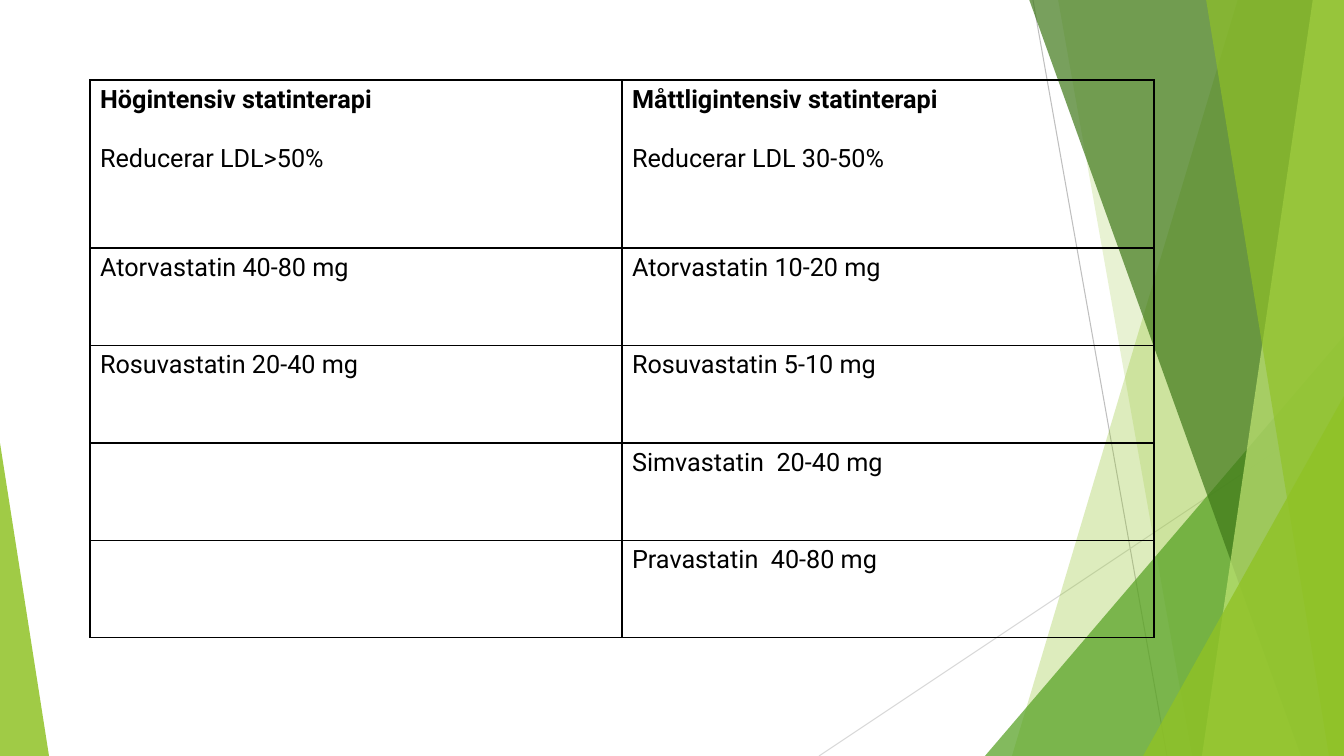
import pptx
import pptx.util
import pptx.dml.color
import pptx.enum.shapes
import pptx.oxml
import pptx.oxml.ns

RGB = pptx.dml.color.RGBColor
KIND = pptx.enum.shapes.MSO_SHAPE
LINK = pptx.enum.shapes.MSO_CONNECTOR
QN = pptx.oxml.ns.qn
PX = 914400 / 100.8
WIDE, HIGH = 1344, 756

BLACK = RGB(0x00, 0x00, 0x00)
GREEN = RGB(0x90, 0xC2, 0x26)
LEAF = RGB(0x54, 0xA0, 0x21)
DARK = RGB(0x3F, 0x78, 0x19)
LIME = RGB(0xC0, 0xE4, 0x74)
SILVER = RGB(0xBF, 0xBF, 0xBF)
PALE = RGB(0xD9, 0xD9, 0xD9)

ROWS = [
    (["Högintensiv statinterapi", "Reducerar LDL>50%"],
     ["Måttligintensiv statinterapi", "Reducerar LDL 30-50%"]),
    (["Atorvastatin 40-80 mg"], ["Atorvastatin 10-20 mg"]),
    (["Rosuvastatin 20-40 mg"], ["Rosuvastatin 5-10 mg"]),
    ([], ["Simvastatin  20-40 mg"]),
    ([], ["Pravastatin  40-80 mg"]),
]


def emu(px):
    return pptx.util.Emu(round(px * PX))


def paint(shape, color, alpha):
    """Fill without outline; alpha is the opacity in percent."""
    shape.shadow.inherit = False
    shape.fill.solid()
    shape.fill.fore_color.rgb = color
    shape.line.fill.background()
    tint = shape.fill._xPr.find(QN("a:solidFill"))[0]
    tint.append(pptx.oxml.parse_xml(
        f'<a:alpha {pptx.oxml.ns.nsdecls("a")} val="{alpha * 1000}"/>'))


def ray(slide, start, end, color):
    line = slide.shapes.add_connector(
        LINK.STRAIGHT, *[emu(n) for n in (*start, *end)])
    line.line.color.rgb = color
    line.line.width = pptx.util.Pt(0.75)
    line._element.spPr.append(pptx.oxml.parse_xml(
        f'<a:effectLst {pptx.oxml.ns.nsdecls("a")}/>'))


def band(slide, box, top, foot, color, alpha):
    """Fill the box to the right of an edge from x=top to x=foot."""
    left, up, wide, high = box
    right, low = left + wide, up + high
    form = slide.shapes.build_freeform(left + top, up - 1, scale=PX)
    form.add_line_segments(
        [(right, up - 1), (right, low), (left + foot, low)], close=True)
    paint(form.convert_to_shape(), color, alpha)


def wedge(slide, box, peak, color, alpha):
    shape = slide.shapes.add_shape(KIND.ISOSCELES_TRIANGLE,
                                   *[emu(n) for n in box])
    shape.adjustments[0] = peak
    paint(shape, color, alpha)


def corner(slide, box, wide, high, color, alpha):
    """Place a right triangle in the lower right corner of the box."""
    left, top, full, tall = box
    wedge(slide, (left + full - wide, top + tall - high, wide, high),
          1, color, alpha)


def decor(slide, box):
    left, top, wide, high = box
    right, low = left + wide, top + high
    ray(slide, (left + 1033, top), (left + 1167, low), SILVER)
    ray(slide, (right, top + 406), (left + 819, low), PALE)
    band(slide, box, 1238, 1012, GREEN, 30)
    band(slide, box, 1058, 1192, GREEN, 20)
    corner(slide, box, 359, 420, LEAF, 72)
    band(slide, box, 1029, 1301, DARK, 70)
    band(slide, box, 1313, 1202, LIME, 70)
    band(slide, box, 1206, 1329, GREEN, 65)
    corner(slide, box, 201, 360, GREEN, 80)
    wedge(slide, (left, low - 313, 49, 313), 0, GREEN, 85)


def frame(cell):
    """Clear the cell's fill and rule its four sides."""
    cell.fill.background()
    props = cell._tc.get_or_add_tcPr()
    for spot, side in enumerate("LRTB"):
        props.insert(spot, pptx.oxml.parse_xml(
            f'<a:ln{side} {pptx.oxml.ns.nsdecls("a")} w="12700"><a:solidFill>'
            f'<a:srgbClr val="{BLACK}"/></a:solidFill></a:ln{side}>'))


def write(cell, lines, head):
    for spot, text in enumerate(lines):
        paras = cell.text_frame
        para = paras.add_paragraph() if spot else paras.paragraphs[0]
        if spot:
            para.space_before = pptx.util.Pt(21)
        run = para.add_run()
        run.text = text
        style = {"name": "Roboto", "size": pptx.util.Pt(18),
                 "bold": head and spot == 0}
        for key, value in style.items():
            setattr(run.font, key, value)
        run.font.color.rgb = BLACK


def doses(slide, box, first):
    """Draw the table; first is the height of its top row."""
    high = box[3]
    count = len(ROWS)
    grid = slide.shapes.add_table(count, 2, *[emu(n) for n in box]).table
    grid.first_row = grid.horz_banding = False
    for row, texts in enumerate(ROWS):
        grid.rows[row].height = emu(
            (high - first) / (count - 1) if row else first)
        for col, lines in enumerate(texts):
            cell = grid.cell(row, col)
            frame(cell)
            write(cell, lines, row == 0)


def main():
    deck = pptx.Presentation()
    deck.slide_width, deck.slide_height = emu(WIDE), emu(HIGH)
    slide = deck.slides.add_slide(deck.slide_layouts[6])
    decor(slide, (0, 0, WIDE, HIGH))
    doses(slide, (90, 80, 1064, 558), 168)
    deck.save("out.pptx")


if __name__ == "__main__":
    main()
